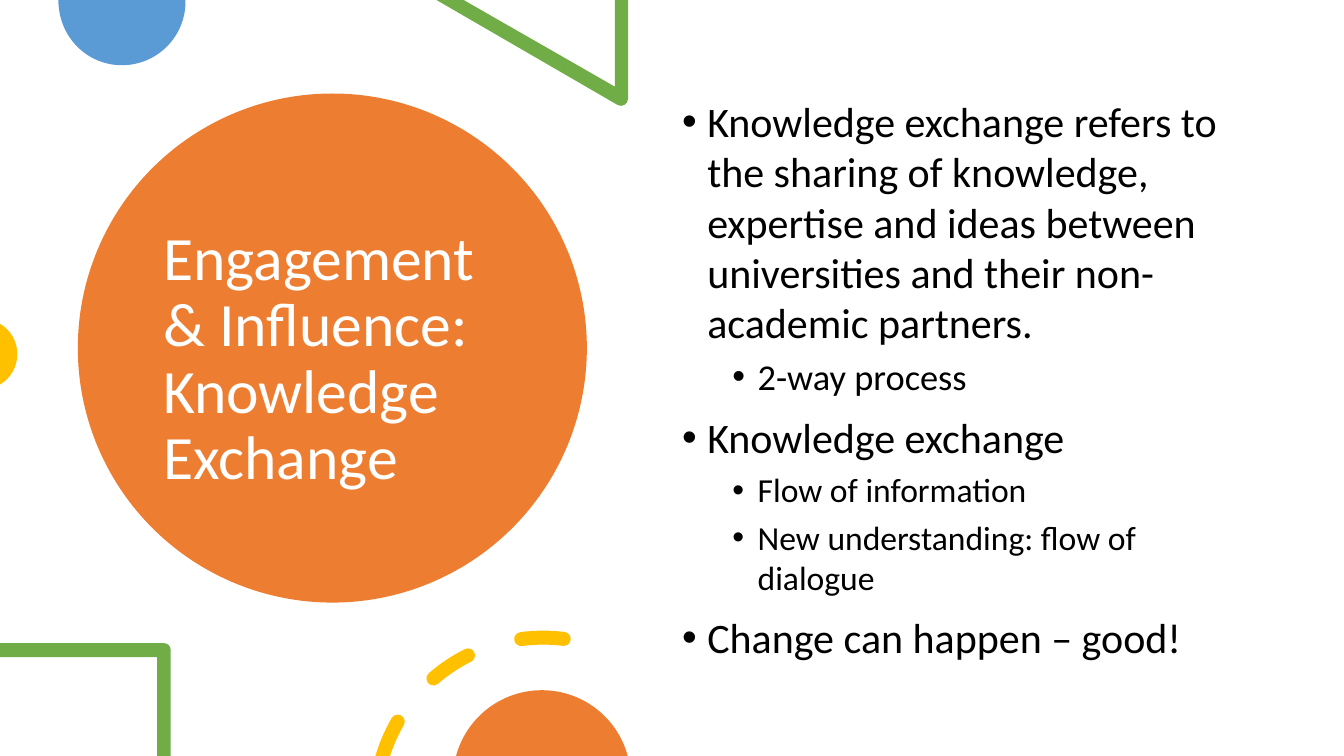
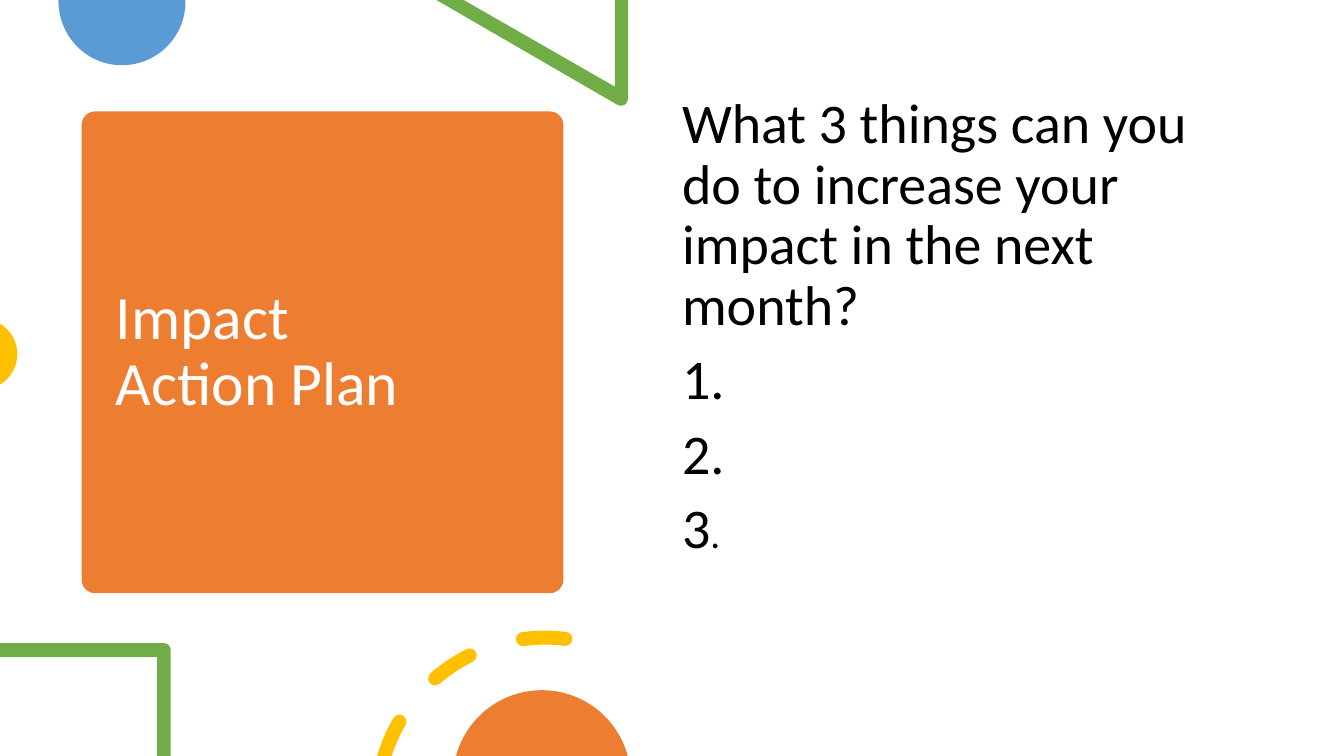
"""Build two slides with a coloured title panel, a body list and geometric decoration."""
from math import ceil, cos, radians, sin, tan

from lxml.etree import SubElement
from pptx import Presentation
from pptx.dml.color import RGBColor
from pptx.enum.shapes import MSO_SHAPE
from pptx.enum.text import MSO_ANCHOR, MSO_AUTO_SIZE, PP_ALIGN
from pptx.oxml.ns import qn
from pptx.util import Pt

COLORS = {
    "orange": "ED7D31",
    "blue": "5B9BD5",
    "green": "70AD47",
    "yellow": "FFC000",
    "white": "FFFFFF",
    "black": "000000",
}
FONT = "Calibri"
WIDTH, HEIGHT = 960, 540
TITLE_SIZE = 44
BODY_LEFT, BODY_TOP, BODY_WIDTH = 480, 64.5, 414
HANGING = 18


def color(name):
    return RGBColor.from_string(COLORS[name])


def paint(shape, name):
    shape.shadow.inherit = False
    shape.fill.solid()
    shape.fill.fore_color.rgb = color(name)
    shape.line.fill.background()


def corners(*points):
    return [(point,) for point in points]


def arc_curves(center_x, center_y, radius, start, end):
    pieces = ceil(abs(end - start) / 90)
    sweep = radians(end - start) / pieces
    reach = 4 / 3 * tan(sweep / 4)

    def spot(angle, pull=0):
        x = center_x + radius * (cos(angle) - pull * sin(angle))
        return x, center_y + radius * (sin(angle) + pull * cos(angle))

    angles = [radians(start) + sweep * piece for piece in range(pieces + 1)]
    return [(spot(first, reach), spot(last, -reach), spot(last))
            for first, last in zip(angles, angles[1:])]


def arc_start(center_x, center_y, radius, angle):
    return center_x + radius * cos(radians(angle)), center_y + radius * sin(radians(angle))


def arc(center_x, center_y, radius, start, end):
    first = corners(arc_start(center_x, center_y, radius, start))
    return first + arc_curves(center_x, center_y, radius, start, end)


def add_outline(page, contours, fill):
    """Draw contours of steps, a step being one corner or the three points of a curve."""
    builder = None
    for contour in contours:
        points = [(Pt(x), Pt(y)) for step in contour for x, y in step]
        if builder:
            builder.move_to(*points[0])
        else:
            builder = page.shapes.build_freeform(*points[0], scale=1.0)
        builder.add_line_segments(points[1:], close=True)
    shape = builder.convert_to_shape()
    lines = iter(list(shape.element.iter(qn("a:lnTo"))))
    for step in [step for contour in contours for step in contour[1:]]:
        segment = next(lines)
        if len(step) == 3:
            segment.tag = qn("a:cubicBezTo")
            for extra in (next(lines), next(lines)):
                segment.append(extra[0])
                extra.getparent().remove(extra)
    paint(shape, fill)


def add_dashed_ring(page, center_x, center_y=575.5, radius=120, half=5):
    ring = (center_x, center_y)
    dashes = []
    for outer_start, inner_start, end in [(196.5, 198, 210), (229.2, 229.2, 243.4), (262.5, 262.5, 277)]:
        contour = arc(*ring, radius + half, outer_start, end)
        contour += arc_curves(*arc_start(*ring, radius, end), half, end, end + 180)
        contour += arc_curves(*ring, radius - half, end, inner_start)
        if outer_start == inner_start:
            tail = arc_start(*ring, radius, outer_start)
            contour += arc_curves(*tail, half, outer_start + 180, outer_start + 360)
        dashes.append(contour)
    add_outline(page, dashes, "yellow")


def decorate(page, ring_x):
    top_disc = corners((132.5, 0), (41.7, 0)) + arc_curves(87.1, 1.2, 45.4, 180, 0)
    triangle = corners((448.6, 0), (439.2, 0), (439.2, 61.9), (331.2, 0), (311.8, 0))
    triangle += arc(443.6, 70.6, 5, 120, 0)
    side_disc = arc(-12.8, 253, 25.2, -59, 59)
    frame = corners((0, 459.4), (0, 469.4), (112.3, 469.4), (112.3, HEIGHT), (121.9, HEIGHT))
    frame += arc(117.2, 464.1, 4.7, 0, -90)
    bottom_disc = arc(387.1, 556.5, 63.5, 195.1, 344.9)
    add_outline(page, [top_disc], "blue")
    add_outline(page, [triangle], "green")
    add_outline(page, [side_disc], "yellow")
    add_outline(page, [frame], "green")
    add_dashed_ring(page, ring_x)
    add_outline(page, [bottom_disc], "orange")


def place(box, left, top, width, height):
    box.left, box.top, box.width, box.height = Pt(left), Pt(top), Pt(width), Pt(height)


def style(para, size, name):
    para.font.name = FONT
    para.font.size = Pt(size)
    para.font.color.rgb = color(name)


def add_title_panel(page, text, preset, panel, title_box):
    title = page.shapes.title
    shape = page.shapes.add_shape(preset, *[Pt(length) for length in panel])
    if preset == MSO_SHAPE.ROUNDED_RECTANGLE:
        shape.adjustments[0] = 0.028
    paint(shape, "orange")
    title.element.addprevious(shape.element)
    place(title, *title_box)
    frame = title.text_frame
    frame.text = text
    frame.word_wrap = True
    frame.auto_size = MSO_AUTO_SIZE.NONE
    frame.vertical_anchor = MSO_ANCHOR.MIDDLE
    para = frame.paragraphs[0]
    para.alignment = PP_ALIGN.LEFT
    para.line_spacing = 0.9
    style(para, TITLE_SIZE, "white")


def set_bullet(para, margin, mark):
    properties = para._p.get_or_add_pPr()
    properties.set("marL", str(Pt(margin)))
    properties.set("indent", str(Pt(-HANGING if mark else 0)))
    if mark:
        SubElement(properties, qn("a:buFont")).set("typeface", "Arial")
        SubElement(properties, qn("a:buChar")).set("char", mark)
    else:
        SubElement(properties, qn("a:buNone"))


def fill_body(page, height, items, mark, line_spacing):
    """Fill the body from (level, size, spans) items, a span being a text and its own size or None."""
    body = page.placeholders[1]
    place(body, BODY_LEFT, BODY_TOP, BODY_WIDTH, height)
    frame = body.text_frame
    frame.word_wrap = True
    frame.auto_size = MSO_AUTO_SIZE.NONE
    frame.vertical_anchor = MSO_ANCHOR.TOP
    for index, (level, size, spans) in enumerate(items):
        para = frame.add_paragraph() if index else frame.paragraphs[0]
        para.level = level
        set_bullet(para, HANGING + 36 * level if mark else 0, mark)
        para.line_spacing = line_spacing
        para.space_before = Pt((5 if level else 10) if index else 0)
        style(para, size, "black")
        for text, span_size in spans:
            span = para.add_run()
            span.text = text
            if span_size:
                span.font.size = Pt(span_size)


def build_exchange(page):
    add_title_panel(page, "Engagement & Influence: Knowledge Exchange", MSO_SHAPE.OVAL,
                    (55.6, 66.8, 363.6, 363.6), (109.4, 96.9, 254.9, 320.4))
    lines = [
        (0, 30, "Knowledge exchange refers to the sharing of knowledge, expertise and ideas "
                "between universities and their non-academic partners."),
        (1, 26, "2-way process"),
        (0, 30, "Knowledge exchange"),
        (1, 24, "Flow of information"),
        (1, 24, "New understanding: flow of dialogue"),
        (0, 30, "Change can happen – good!"),
    ]
    items = [(level, size, [(text, None)]) for level, size, text in lines]
    fill_body(page, 468, items, "•", 1.0)
    decorate(page, 388)


def build_action_plan(page):
    add_title_panel(page, "Impact\vAction Plan", MSO_SHAPE.ROUNDED_RECTANGLE,
                    (58.3, 79.6, 344.1, 344.1), (75.5, 87.8, 310.3, 328.3))
    question = "What 3 things can you do to increase your impact in the next month?"
    paragraphs = [[(question, None)], [("1.", None)], [("2.", None)], [("3", None), (".", 28)]]
    fill_body(page, 385.2, [(0, 40, spans) for spans in paragraphs], None, 0.9)
    decorate(page, 389.2)


def main():
    deck = Presentation()
    deck.slide_width, deck.slide_height = Pt(WIDTH), Pt(HEIGHT)
    for build in (build_exchange, build_action_plan):
        page = deck.slides.add_slide(deck.slide_layouts[1])
        page.background.fill.solid()
        page.background.fill.fore_color.rgb = color("white")
        build(page)
    deck.save("out.pptx")


if __name__ == "__main__":
    main()
